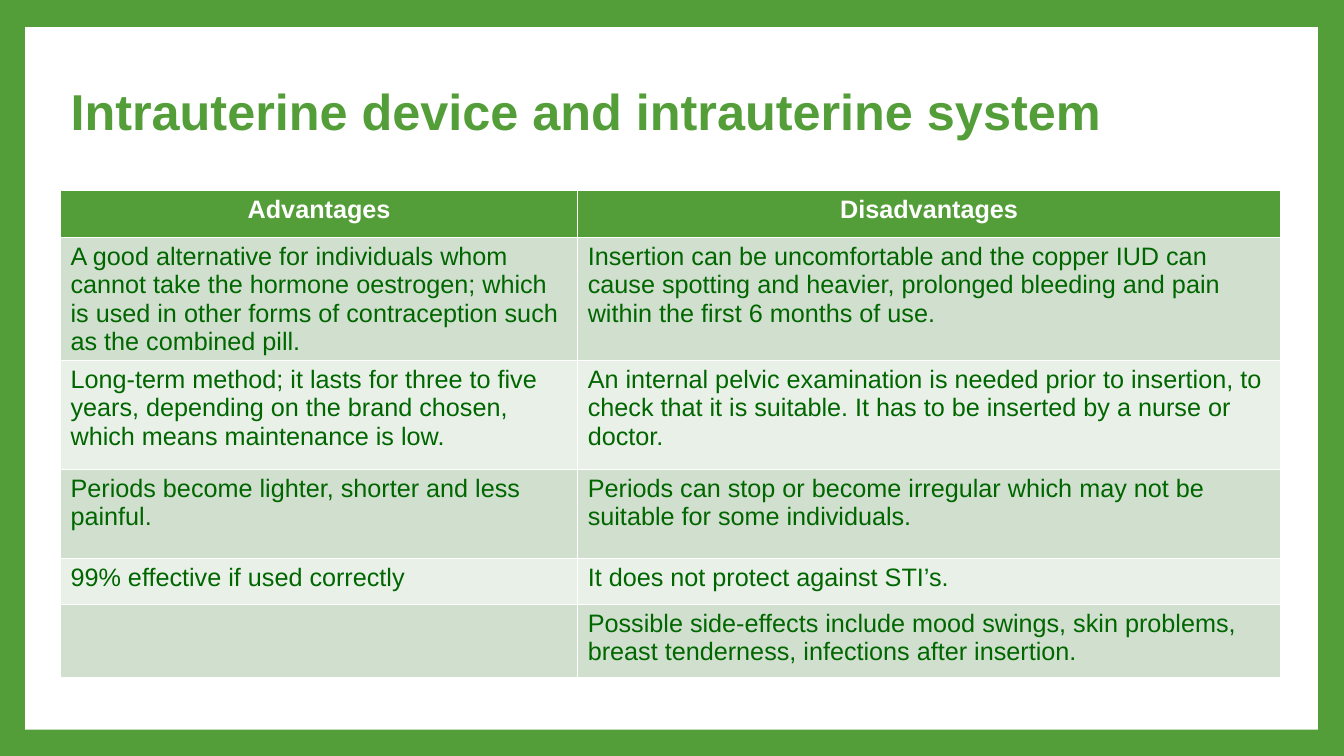
"""Build a slide comparing advantages and disadvantages of the IUD and IUS."""
from pptx import Presentation
from pptx.dml.color import RGBColor
from pptx.enum.shapes import MSO_SHAPE
from pptx.enum.text import MSO_ANCHOR, MSO_AUTO_SIZE, PP_ALIGN
from pptx.util import Inches, Pt

GREEN = RGBColor(0x54, 0x9E, 0x39)
DARK_GREEN = RGBColor(0x00, 0x66, 0x00)
WHITE = RGBColor(0xFF, 0xFF, 0xFF)
BANDS = [RGBColor(0xE9, 0xF0, 0xE8), RGBColor(0xD1, 0xDF, 0xCE)]

LEFT = Inches(0.6)
COLUMN_WIDTHS = [5.13, 6.97]
ROWS = [
    (0.47, "Advantages", "Disadvantages"),
    (1.18,
     "A good alternative for individuals whom cannot take the hormone oestrogen; "
     "which is used in other forms of contraception such as the combined pill.",
     "Insertion can be uncomfortable and the copper IUD can cause spotting and "
     "heavier, prolonged bleeding and pain within the first 6 months of use."),
    (1.08,
     "Long-term method; it lasts for three to five years, depending on the brand "
     "chosen, which means maintenance is low.",
     "An internal pelvic examination is needed prior to insertion, to check that "
     "it is suitable. It has to be inserted by a nurse or doctor."),
    (0.88,
     "Periods become lighter, shorter and less painful.",
     "Periods can stop or become irregular which may not be suitable for some "
     "individuals."),
    (0.46, "99% effective if used correctly", "It does not protect against STI’s."),
    (0.72, "",
     "Possible side-effects include mood swings, skin problems, breast tenderness, "
     "infections after insertion."),
]

prs = Presentation()
prs.slide_width, prs.slide_height = Inches(13.33), Inches(7.5)
slide = prs.slides.add_slide(prs.slide_layouts[5])
slide.background.fill.solid()
slide.background.fill.fore_color.rgb = GREEN

panel = slide.shapes.add_shape(
    MSO_SHAPE.RECTANGLE, Inches(0.25), Inches(0.27), Inches(12.82), Inches(6.97))
panel.shadow.inherit = False
panel.fill.solid()
panel.fill.fore_color.rgb = WHITE
panel.line.fill.background()

comparison = slide.shapes.add_table(
    len(ROWS), len(COLUMN_WIDTHS), LEFT, Inches(1.89),
    Inches(sum(COLUMN_WIDTHS)), Inches(sum(row[0] for row in ROWS)))
table = comparison.table
for column, width in zip(table.columns, COLUMN_WIDTHS):
    column.width = Inches(width)

for r, (height, *texts) in enumerate(ROWS):
    table.rows[r].height = Inches(height)
    is_header = r == 0
    for c, text in enumerate(texts):
        cell = table.cell(r, c)
        cell.fill.solid()
        cell.fill.fore_color.rgb = GREEN if is_header else BANDS[r % 2]
        cell.text = text
        paragraph = cell.text_frame.paragraphs[0]
        paragraph.alignment = PP_ALIGN.CENTER if is_header else PP_ALIGN.LEFT
        paragraph.font.name = "Arial"
        paragraph.font.size = Pt(18)
        paragraph.font.bold = is_header
        paragraph.font.color.rgb = WHITE if is_header else DARK_GREEN

title = slide.shapes.title
title.left, title.top = LEFT, Inches(0.81)
title.width, title.height = Inches(10.8), Inches(1.48)
title.text_frame.text = "Intrauterine device and intrauterine system"
title.text_frame.word_wrap = True
title.text_frame.auto_size = MSO_AUTO_SIZE.NONE
title.text_frame.vertical_anchor = MSO_ANCHOR.TOP
heading = title.text_frame.paragraphs[0]
heading.alignment = PP_ALIGN.LEFT
heading.line_spacing = 0.9
heading.font.name = "Arial"
heading.font.size = Pt(36)
heading.font.bold = True
heading.font.color.rgb = GREEN
comparison.element.addnext(title.element)

prs.save("out.pptx")
